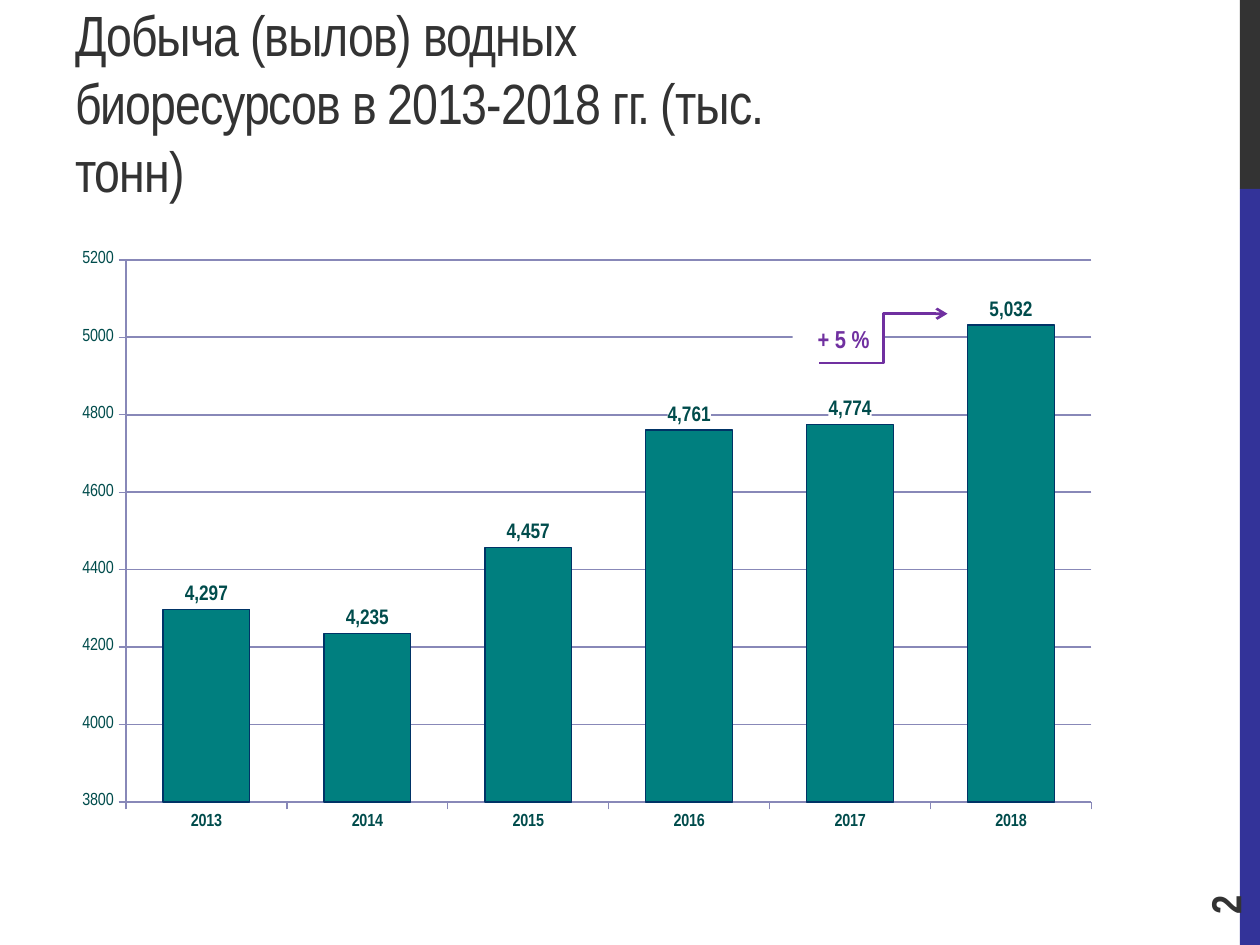
from lxml import etree
from pptx import Presentation
from pptx.chart.data import CategoryChartData
from pptx.dml.color import RGBColor
from pptx.enum.chart import XL_CHART_TYPE, XL_LABEL_POSITION, XL_TICK_MARK
from pptx.enum.shapes import MSO_CONNECTOR, MSO_SHAPE
from pptx.enum.text import MSO_ANCHOR, PP_ALIGN
from pptx.oxml import parse_xml
from pptx.oxml.ns import nsdecls, qn
from pptx.util import Inches, Pt

COLUMN = XL_CHART_TYPE.COLUMN_CLUSTERED
OUTSIDE = XL_TICK_MARK.OUTSIDE
OUTSIDE_END = XL_LABEL_POSITION.OUTSIDE_END
ELBOW = MSO_CONNECTOR.ELBOW
RECT = MSO_SHAPE.RECTANGLE
TOP, MIDDLE, BOTTOM = MSO_ANCHOR.TOP, MSO_ANCHOR.MIDDLE, MSO_ANCHOR.BOTTOM
LEFT, RIGHT = PP_ALIGN.LEFT, PP_ALIGN.RIGHT

FONT = "Arial Narrow"
DARK, INDIGO, WHITE = "333333", "333399", "FFFFFF"
TEAL, DEEP_TEAL, NAVY = "007F7F", "004C4C", "003366"
PURPLE, GRID = "7030A0", "8888B8"

TITLE = "Добыча (вылов) водных биоресурсов в 2013-2018 гг. (тыс. тонн)"
CATCH = {"2013": 4297, "2014": 4235, "2015": 4457,
         "2016": 4761, "2017": 4774, "2018": 5032}
SIDE_BARS = [(0, 1.5, DARK), (1.5, 6, INDIGO)]
PLOT = {"x": 0.06, "y": 0.03, "w": 0.92, "h": 0.9}


def rgb(value):
    return RGBColor.from_string(value)


def set_font(font, size, color, bold=False):
    font.name, font.size, font.bold = FONT, Pt(size), bold
    font.color.rgb = rgb(color)


def set_line(line, color, width):
    line.color.rgb = rgb(color)
    line.width = Pt(width)


def add_rect(slide, box, color):
    s = slide.shapes.add_shape(RECT, *map(Inches, box))
    s.shadow.inherit = False
    s.fill.solid()
    s.fill.fore_color.rgb = rgb(color)
    s.line.fill.background()
    return s


def write(s, text, size, color, bold=False, align=LEFT, anchor=TOP, spacing=None):
    tf = s.text_frame
    tf.word_wrap = True
    tf.vertical_anchor = anchor
    p = tf.paragraphs[0]
    p.alignment = align
    r = p.add_run()
    r.text = text
    set_font(r.font, size, color, bold)
    if spacing is not None:
        r.font._element.set("spc", str(round(spacing * 100)))
    return s


def add_text(slide, box, text, size, color, **fmt):
    s = slide.shapes.add_textbox(*map(Inches, box))
    return write(s, text, size, color, **fmt)


def add_catch_chart(slide, box):
    data = CategoryChartData()
    data.categories = list(CATCH)
    data.add_series("Series 1", list(CATCH.values()))
    chart = slide.shapes.add_chart(COLUMN, *map(Inches, box), data).chart
    chart.has_legend = chart.has_title = False
    set_font(chart.font, 10, INDIGO)

    for axis, bold in ((chart.category_axis, True), (chart.value_axis, False)):
        axis.major_tick_mark = OUTSIDE
        set_font(axis.tick_labels.font, 10, DEEP_TEAL, bold)
        set_line(axis.format.line, GRID, 0.75)
    axis = chart.value_axis
    axis.minimum_scale, axis.maximum_scale, axis.major_unit = 3800, 5200, 200
    axis.tick_labels.number_format = "0"
    axis.tick_labels.number_format_is_linked = False
    axis.has_major_gridlines = True
    set_line(axis.major_gridlines.format.line, GRID, 1)

    plot = chart.plots[0]
    plot.gap_width = 86
    plot.vary_by_categories = False
    series = plot.series[0]
    series.format.fill.solid()
    series.format.fill.fore_color.rgb = rgb(TEAL)
    set_line(series.format.line, NAVY, 0.75)

    labels = series.data_labels
    labels.show_value = True
    labels.position = OUTSIDE_END
    labels.number_format = "#,##0"
    labels.number_format_is_linked = False
    set_font(labels.font, 12, DEEP_TEAL, True)
    fill = parse_xml(f'<c:spPr {nsdecls("c", "a")}><a:solidFill>'
                     f'<a:srgbClr val="{WHITE}"/></a:solidFill></c:spPr>')
    labels._element.find(qn("c:numFmt")).addnext(fill)

    area = chart._chartSpace.chart.plotArea
    for old in area.findall(qn("c:layout")):
        area.remove(old)
    sides = "".join(f'<c:{k}Mode val="edge"/>' for k in "xy")
    sizes = "".join(f'<c:{k} val="{v}"/>' for k, v in PLOT.items())
    area.insert(0, parse_xml(
        f'<c:layout {nsdecls("c")}><c:manualLayout><c:layoutTarget val="inner"/>'
        f'{sides}{sizes}</c:manualLayout></c:layout>'))


def add_growth_arrow(slide, start, end):
    s = slide.shapes.add_connector(ELBOW, *map(Inches, start + end))
    set_line(s.line, PURPLE, 1.5)
    etree.SubElement(s.line._get_or_add_ln(), qn("a:tailEnd"), type="arrow")
    etree.SubElement(s._element.spPr, qn("a:effectLst"))


def main():
    prs = Presentation()
    prs.slide_width, prs.slide_height = Inches(10), Inches(7.5)
    slide = prs.slides.add_slide(prs.slide_layouts[6])
    for top, height, color in SIDE_BARS:
        add_rect(slide, (9.84, top, 0.16, height), color)
    add_text(slide, (0.5, 0.17, 6.33, 1.5), TITLE, 32.4, DARK,
             anchor=BOTTOM, spacing=-0.6)
    add_catch_chart(slide, (0.5, 1.92, 8.33, 4.78))
    number = add_text(slide, (9, 6.44, 1.44, 0.4), "2", 24, DARK,
                      bold=True, anchor=MIDDLE)
    number.rotation = 270
    add_growth_arrow(slide, (6.5, 2.88), (7.52, 2.49))
    write(add_rect(slide, (6.29, 2.52, 0.71, 0.34), WHITE), "+ 5 %", 14, PURPLE,
          bold=True, align=RIGHT)
    prs.save("out.pptx")


if __name__ == "__main__":
    main()
